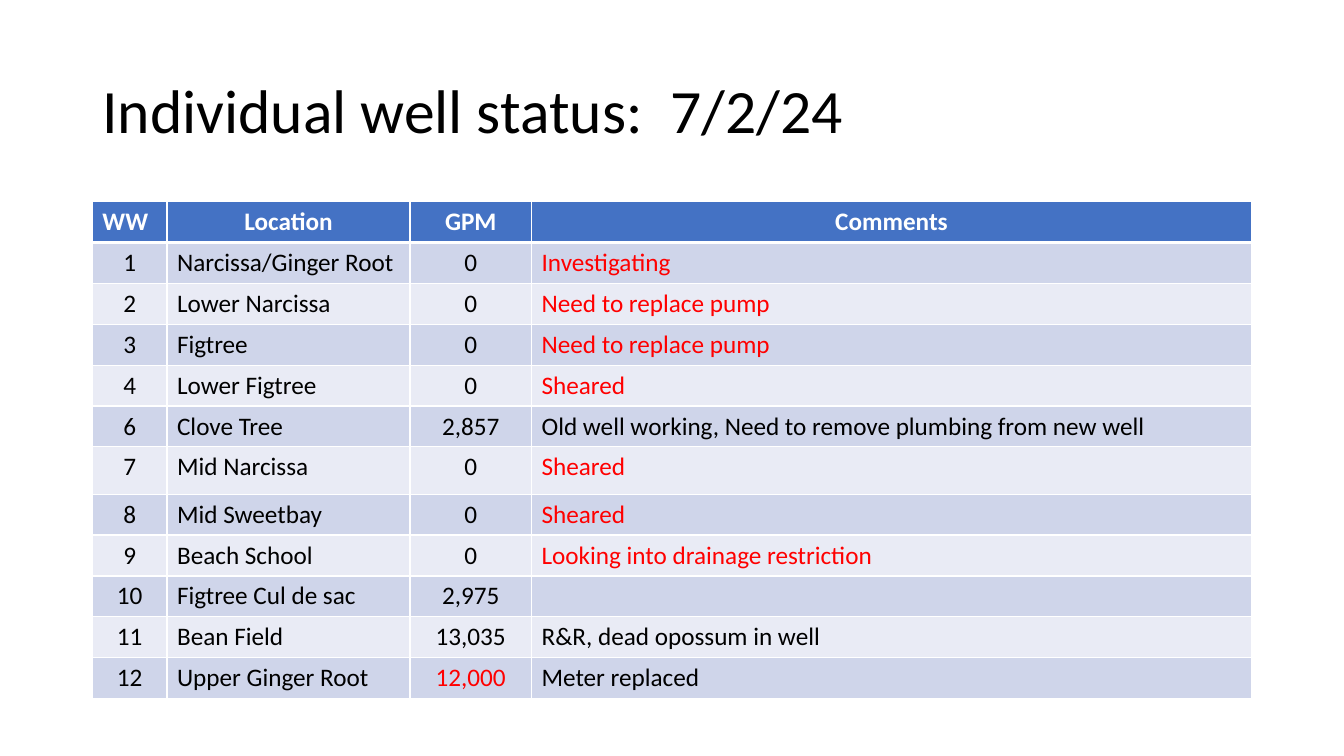
from lxml.etree import SubElement
from pptx import Presentation
from pptx.dml.color import RGBColor
from pptx.enum.text import MSO_ANCHOR as Anchor, PP_ALIGN as Align
from pptx.oxml.ns import qn
from pptx.util import Pt

FONT = "Calibri"
BLACK, WHITE, RED = "000000", "FFFFFF", "FF0000"
HEADER_FILL, BAND_FILLS = "4472C4", ("CFD5EA", "E9EBF5")
COLUMN_WIDTHS = (53.3, 173.6, 86.8, 514.3)
ROW_HEIGHT, TALL_ROW_HEIGHT, TALL_WELL = 29.2, 33.8, "7"
HEADINGS = ("WW", "Location", "GPM", "Comments")

# Well, location, flow, comment, and the columns shown in red
WELLS = (
    ("1", "Narcissa/Ginger Root", "0", "Investigating", {3}),
    ("2", "Lower Narcissa", "0", "Need to replace pump", {3}),
    ("3", "Figtree", "0", "Need to replace pump", {3}),
    ("4", "Lower Figtree", "0", "Sheared", {3}),
    ("6", "Clove Tree", "2,857",
     "Old well working, Need to remove plumbing from new well", set()),
    ("7", "Mid Narcissa", "0", "Sheared", {3}),
    ("8", "Mid Sweetbay", "0", "Sheared", {3}),
    ("9", "Beach School", "0", "Looking into drainage restriction", {3}),
    ("10", "Figtree Cul de sac", "2,975", "", set()),
    ("11", "Bean Field", "13,035", "R&R, dead opossum in well", set()),
    ("12", "Upper Ginger Root", "12,000", "Meter replaced", {2}),
)


def color(value):
    return RGBColor.from_string(value)


def style_text(para, size, text_color, bold=False, align=Align.LEFT):
    para.alignment = align
    font = para.font
    font.name, font.size, font.bold = FONT, Pt(size), bold
    font.color.rgb = color(text_color)


def add_borders(cell, bottom_width):
    properties = cell._tc.get_or_add_tcPr()
    for side, width in (("L", 1), ("R", 1), ("T", 1), ("B", bottom_width)):
        line = SubElement(properties, qn(f"a:ln{side}"), w=str(Pt(width)))
        fill = SubElement(line, qn("a:solidFill"))
        SubElement(fill, qn("a:srgbClr"), val=WHITE)


def fill_cell(cell, text, fill, text_color, align, header=False):
    add_borders(cell, 3 if header else 1)
    cell.fill.solid()
    cell.fill.fore_color.rgb = color(fill)
    cell.text = text
    style_text(cell.text_frame.paragraphs[0], 18, text_color, header, align)


def add_title(page, left, top, width, height):
    box = page.shapes.add_textbox(Pt(left), Pt(top), Pt(width), Pt(height))
    frame = box.text_frame
    frame.word_wrap = True
    frame.vertical_anchor = Anchor.MIDDLE
    para = frame.paragraphs[0]
    para.text = "Individual well status:  7/2/24"
    para.line_spacing = 0.9
    style_text(para, 44, BLACK)


def add_well_table(page, left, top, width, height):
    table = page.shapes.add_table(len(WELLS) + 1, len(HEADINGS), Pt(left),
                                  Pt(top), Pt(width), Pt(height)).table
    for column, column_width in zip(table.columns, COLUMN_WIDTHS):
        column.width = Pt(column_width)
    for row in table.rows:
        row.height = Pt(ROW_HEIGHT)

    # Header row
    for index, heading in enumerate(HEADINGS):
        align = Align.CENTER if index else Align.LEFT
        fill_cell(table.cell(0, index), heading, HEADER_FILL, WHITE, align, True)

    # One banded row per well
    for number, (*values, red_columns) in enumerate(WELLS, 1):
        if values[0] == TALL_WELL:
            table.rows[number].height = Pt(TALL_ROW_HEIGHT)
        for index, value in enumerate(values):
            fill_cell(table.cell(number, index), value,
                      BAND_FILLS[(number - 1) % 2],
                      RED if index in red_columns else BLACK,
                      Align.LEFT if index % 2 else Align.CENTER)


def main():
    deck = Presentation()
    deck.slide_width, deck.slide_height = Pt(960), Pt(540)
    page = deck.slides.add_slide(deck.slide_layouts[6])
    add_title(page, 66, 28.75, 828, 104.4)
    add_well_table(page, 66, 144, sum(COLUMN_WIDTHS), 355)
    deck.save("out.pptx")


if __name__ == "__main__":
    main()
